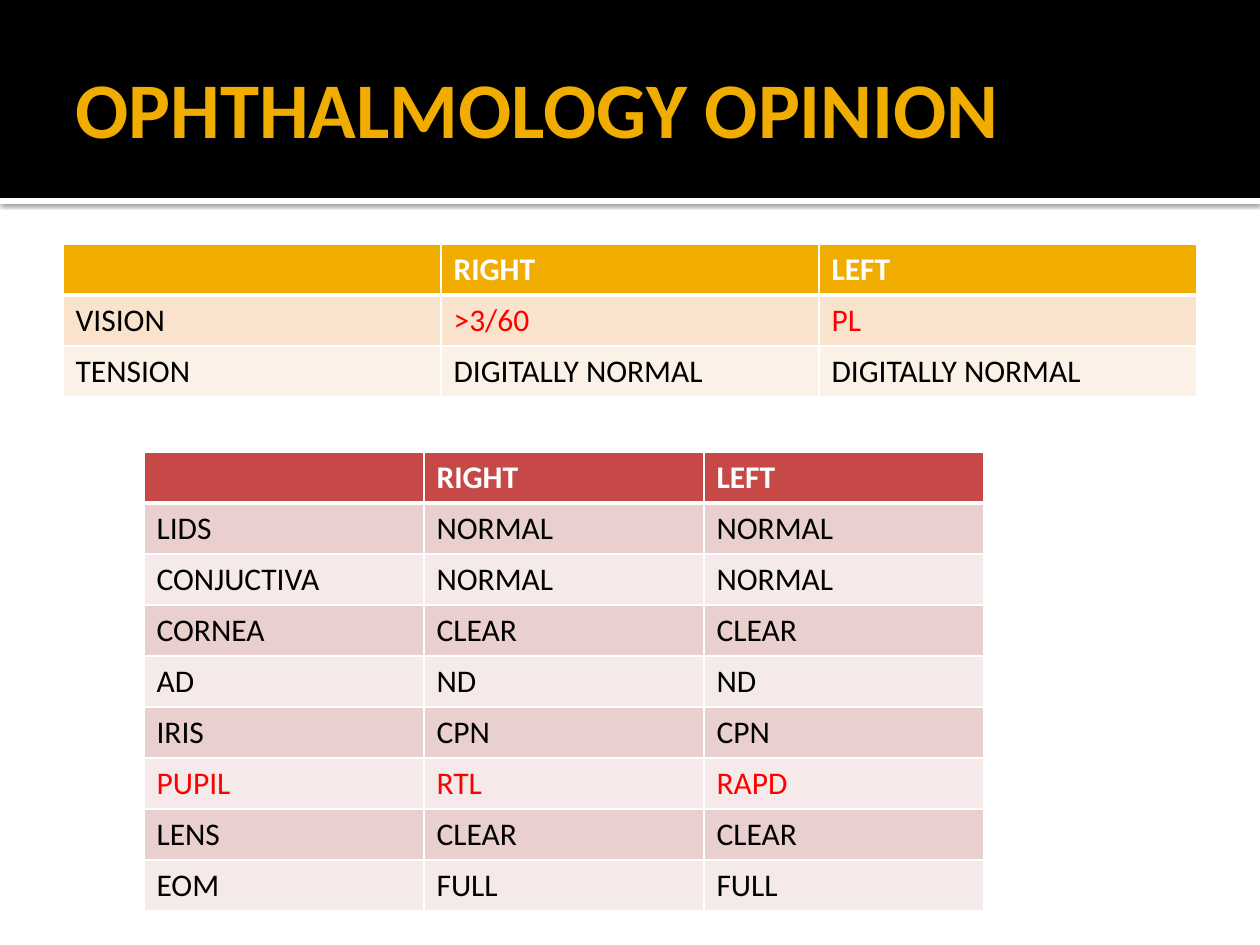
import pptx
import pptx.dml.color
import pptx.enum.shapes
import pptx.enum.text
import pptx.oxml
import pptx.oxml.ns
import pptx.util

EMU_PER_PX = 914400 / 126
COLORS = {
    "white": "FFFFFF", "black": "000000", "red": "FF0000", "gold": "F0AD00",
    "gold_band": "F9E3CC", "gold_pale": "FCF1E7",
    "brick": "C64847", "brick_band": "EACFCF", "brick_pale": "F5E9E9",
}
HEADER = ["", "RIGHT", "LEFT"]
ABNORMAL = {">3/60", "PL", "PUPIL", "RTL", "RAPD"}


def px(length):
    return pptx.util.Emu(round(length * EMU_PER_PX))


def rgb(name):
    return pptx.dml.color.RGBColor.from_string(COLORS[name])


def add_xml(parent, xml):
    namespace = pptx.oxml.ns.nsdecls("a")
    parent.append(pptx.oxml.parse_xml(xml.replace(" ", f" {namespace} ", 1)))


class SlideBuilder:
    font = "Calibri"

    def __init__(self, page):
        self.page = page

    def style(self, para, size, color, bold=False):
        para.font.name = self.font
        para.font.size = pptx.util.Pt(size)
        para.font.bold = bold
        para.font.color.rgb = rgb(color)

    def band(self, left, top, width, height, color):
        shape = self.page.shapes.add_shape(
            pptx.enum.shapes.MSO_SHAPE.RECTANGLE,
            px(left), px(top), px(width), px(height))
        shape.shadow.inherit = False
        shape.fill.solid()
        shape.fill.fore_color.rgb = rgb(color)
        shape.line.fill.background()
        return shape

    def drop_shadow(self, shape):
        effects = shape.element.spPr.find(pptx.oxml.ns.qn("a:effectLst"))
        add_xml(effects, '<a:outerShdw blurRad="31750" dist="10160" dir="5400000">'
                f'<a:srgbClr val="{COLORS["black"]}"><a:alpha val="60000"/></a:srgbClr>'
                '</a:outerShdw>')

    def title(self, text, left, top, width, height):
        box = self.page.shapes.add_textbox(px(left), px(top), px(width), px(height))
        frame = box.text_frame
        frame.word_wrap = True
        frame.vertical_anchor = pptx.enum.text.MSO_ANCHOR.MIDDLE
        frame.margin_right = pptx.util.Inches(0.05)
        para = frame.paragraphs[0]
        para.text = text
        self.style(para, 45, "gold", bold=True)

    def borders(self, cell, row):
        widths = {"L": 1, "R": 1, "T": 3 if row == 1 else 1, "B": 3 if row == 0 else 1}
        for side, width in widths.items():
            add_xml(cell._tc.get_or_add_tcPr(),
                    f'<a:ln{side} w="{pptx.util.Pt(width)}"><a:solidFill>'
                    f'<a:srgbClr val="{COLORS["white"]}"/></a:solidFill></a:ln{side}>')

    def table(self, rows, left, top, width, row_height, theme):
        table = self.page.shapes.add_table(
            len(rows), len(rows[0]), px(left), px(top),
            px(width), px(row_height * len(rows))).table
        for row, texts in enumerate(rows):
            for column, text in enumerate(texts):
                cell = table.cell(row, column)
                self.borders(cell, row)
                cell.fill.solid()
                shade = "" if row == 0 else "_band" if row % 2 else "_pale"
                cell.fill.fore_color.rgb = rgb(theme + shade)
                para = cell.text_frame.paragraphs[0]
                para.text = text
                body = "red" if text in ABNORMAL else "black"
                self.style(para, 18, body if row else "white", bold=row == 0)


def main():
    deck = pptx.Presentation()
    deck.slide_width, deck.slide_height = px(1260), px(945)
    builder = SlideBuilder(deck.slides.add_slide(deck.slide_layouts[6]))

    # Title band with a shadowed white rule under it
    rule = builder.band(0, 198, 1260, 6, "white")
    builder.drop_shadow(rule)
    builder.band(0, 0, 1260, 198, "black")
    builder.title("OPHTHALMOLOGY OPINION", 63, 21, 1134, 173)

    # Vision and tension
    builder.table([
        HEADER,
        ["VISION", ">3/60", "PL"],
        ["TENSION", "DIGITALLY NORMAL", "DIGITALLY NORMAL"],
    ], 63, 244, 1134, 51, "gold")

    # Eye examination, part by part
    builder.table([
        HEADER,
        ["LIDS", "NORMAL", "NORMAL"],
        ["CONJUCTIVA", "NORMAL", "NORMAL"],
        ["CORNEA", "CLEAR", "CLEAR"],
        ["AD", "ND", "ND"],
        ["IRIS", "CPN", "CPN"],
        ["PUPIL", "RTL", "RAPD"],
        ["LENS", "CLEAR", "CLEAR"],
        ["EOM", "FULL", "FULL"],
    ], 144, 452, 840, 51, "brick")

    deck.save("out.pptx")


if __name__ == "__main__":
    main()
